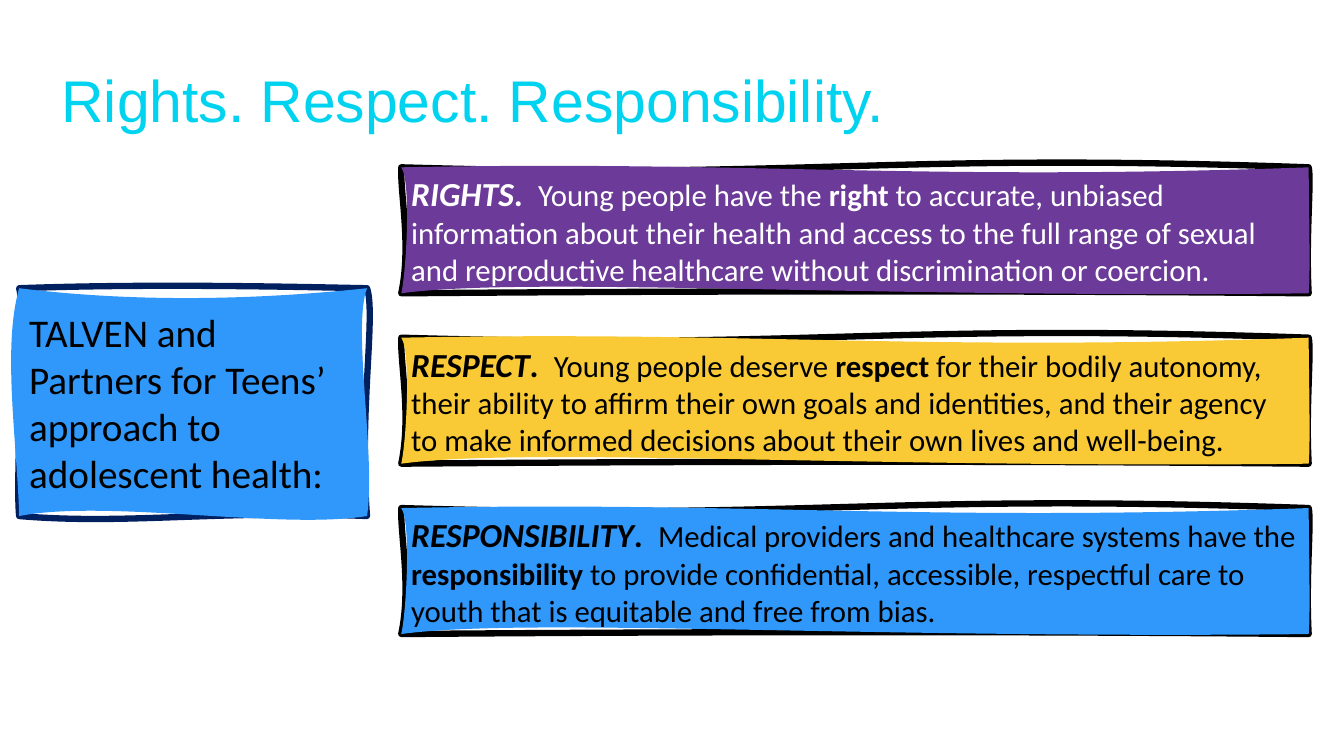
import pptx
import pptx.dml.color
import pptx.enum.text
import pptx.oxml
import pptx.oxml.ns
import pptx.util
from pptx.util import Inches

TITLE = "Rights. Respect. Responsibility."
APPROACH = "TALVEN and Partners for Teens’ approach to adolescent health:"

# fill, text colour, heading, text before the key word, key word, text after it
PRINCIPLES = [
    ("6C3A99", "FFFFFF", "RIGHTS", "Young people have the ", "right",
     " to accurate, unbiased information about their health and access to the full "
     "range of sexual and reproductive healthcare without discrimination or coercion."),
    ("F9CA35", "000000", "RESPECT", "Young people deserve ", "respect",
     " for their bodily autonomy, their ability to affirm their own goals and identities, "
     "and their agency to make informed decisions about their own lives and well-being."),
    ("3098FB", "000000", "RESPONSIBILITY",
     "Medical providers and healthcare systems have the ", "responsibility",
     " to provide confidential, accessible, respectful care to youth that is equitable "
     "and free from bias."),
]

# Hand-drawn boxes in hundredths of an inch. Each side is a Bezier curve given by its
# two control points; the sides run top, right, bottom, left.
APPROACH_SKETCH = {
    "size": (345, 226),
    "outline": [(134, -5, 292, -1), (354, 26, 337, 124), (195, 220, 105, 235), (-4, 189, 7, 26)],
    "fill": [(105, 13, 221, 13), (330, 40, 354, 165), (259, 240, 88, 209), (-2, 153, -17, 59)],
}
PRINCIPLE_SKETCH = {
    "size": (900, 125),
    "outline": [(411, 12, 473, -15), (903, 13, 897, 69), (590, 122, 234, 123), (10, 78, -1, 27)],
    "fill": [(352, -7, 506, 14), (900, 24, 902, 109), (460, 130, 125, 108), (5, 104, 10, 14)],
}
PRINCIPLE_LEFT, PRINCIPLE_TOP, PRINCIPLE_STEP = 3.98, 1.66, 1.69


def color(hex_value):
    return pptx.dml.color.RGBColor.from_string(hex_value)


def curved_path(size, sides, flags):
    """Return a closed path whose four sides are Bezier curves."""
    width, height = size
    corners = [(width, 0), (width, height), (0, height), (0, 0)]
    curves = ""
    for (x1, y1, x2, y2), corner in zip(sides, corners):
        points = [(x1, y1), (x2, y2), corner]
        curves += "<a:cubicBezTo>%s</a:cubicBezTo>" % "".join(
            f'<a:pt x="{x}" y="{y}"/>' for x, y in points)
    return pptx.oxml.parse_xml(
        f'<a:path {pptx.oxml.ns.nsdecls("a")} w="{width}" h="{height}" {flags}>'
        f'<a:moveTo><a:pt x="0" y="0"/></a:moveTo>{curves}<a:close/></a:path>')


def add_sketch_box(slide, sketch, left, top, fill, line):
    width, height = sketch["size"]
    builder = slide.shapes.build_freeform(0, 0, scale=Inches(1) / 100)
    builder.add_line_segments([(width, 0), (width, height), (0, height)], close=True)
    shape = builder.convert_to_shape(Inches(left), Inches(top))

    # Outline and fill follow different curves
    path_list = shape._element.spPr.find(".//" + pptx.oxml.ns.qn("a:pathLst"))
    path_list.remove(path_list[0])
    path_list.append(curved_path(sketch["size"], sketch["outline"], 'fill="none"'))
    path_list.append(curved_path(sketch["size"], sketch["fill"], 'stroke="0"'))

    shape.shadow.inherit = False
    shape.fill.solid()
    shape.fill.fore_color.rgb = color(fill)
    shape.line.color.rgb = color(line)
    shape.line.width = pptx.util.Pt(4.5)
    shape.text_frame.word_wrap = True
    shape.text_frame.vertical_anchor = pptx.enum.text.MSO_ANCHOR.MIDDLE
    return shape


def format_paragraph(paragraph, font_name, size, text_color):
    paragraph.alignment = pptx.enum.text.PP_ALIGN.LEFT
    paragraph.font.name = font_name
    paragraph.font.size = pptx.util.Pt(size)
    paragraph.font.color.rgb = color(text_color)


def main():
    presentation = pptx.Presentation()
    presentation.slide_width = Inches(13.33)
    presentation.slide_height = Inches(7.5)
    slide = presentation.slides.add_slide(presentation.slide_layouts[5])

    # Title
    title = slide.shapes.title
    title.left, title.top = Inches(0.51), Inches(0.3)
    title.width, title.height = Inches(8.7), Inches(1.45)
    title.text_frame.text = TITLE
    title.text_frame.vertical_anchor = pptx.enum.text.MSO_ANCHOR.MIDDLE
    paragraph = title.text_frame.paragraphs[0]
    paragraph.line_spacing = 0.9
    format_paragraph(paragraph, "Arial", 42, "00D3EF")

    # Approach box
    shape = add_sketch_box(slide, APPROACH_SKETCH, 0.19, 2.86, "3098FB", "002060")
    shape.text_frame.text = APPROACH
    format_paragraph(shape.text_frame.paragraphs[0], "Calibri", 28, "000000")

    # Three principles
    for index, (fill, text_color, heading, before, key_word, after) in enumerate(PRINCIPLES):
        top = PRINCIPLE_TOP + index * PRINCIPLE_STEP
        shape = add_sketch_box(slide, PRINCIPLE_SKETCH, PRINCIPLE_LEFT, top, fill, "000000")
        paragraph = shape.text_frame.paragraphs[0]
        format_paragraph(paragraph, "Calibri", 22, text_color)
        runs = [(heading, 24, True, True), (".  ", 24, True, False),
                (before, 22, False, False), (key_word, 22, True, False),
                (after, 22, False, False)]
        for text, size, bold, italic in runs:
            run = paragraph.add_run()
            run.text = text
            run.font.size = pptx.util.Pt(size)
            run.font.bold = bold
            run.font.italic = italic

    presentation.save("out.pptx")


if __name__ == "__main__":
    main()
